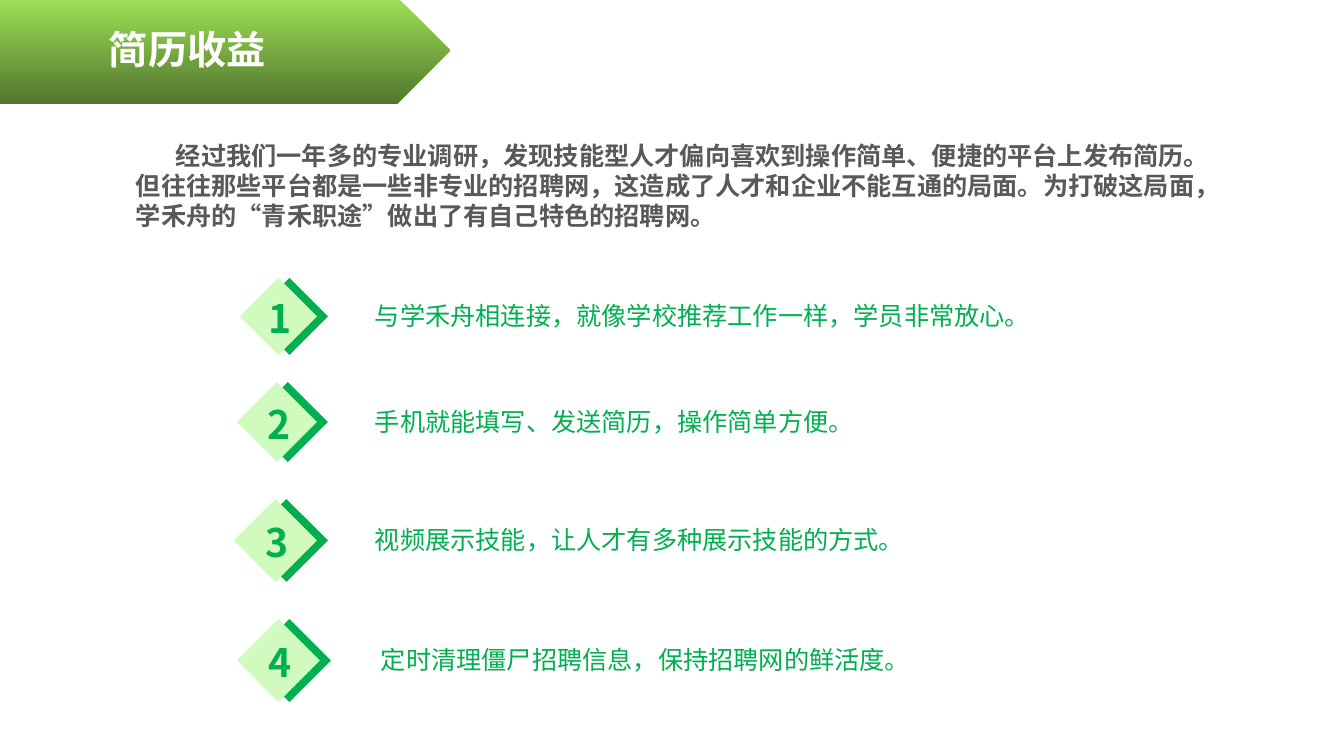
from pptx import Presentation
from pptx import util as u
from pptx.dml.color import RGBColor
from pptx.enum import shapes, text
from pptx.oxml.ns import qn

# Content
TITLE = "简历收益"
INTRO = ("经过我们一年多的专业调研，发现技能型人才偏向喜欢到操作简单、便捷的平台上发布简历。"
         "但往往那些平台都是一些非专业的招聘网，这造成了人才和企业不能互通的局面。"
         "为打破这局面，学禾舟的“青禾职途”做出了有自己特色的招聘网。")
# (benefit, text left, diamond left, diamond top, diamond size) in px
BENEFITS = [
    ("与学禾舟相连接，就像学校推荐工作一样，学员非常放心。", 365, 240, 278, 77),
    ("手机就能填写、发送简历，操作简单方便。", 365, 237, 382, 80),
    ("视频展示技能，让人才有多种展示技能的方式。", 365, 234, 499, 83),
    ("定时清理僵尸招聘信息，保持招聘网的鲜活度。", 371, 237, 619, 83),
]
COLORS = {"green": "00B050", "pale": "D1FABE", "gray": "595959", "white": "FFFFFF",
          "banner_top": "9EE256", "banner_bottom": "52762D"}
FONT = "Noto Sans CJK SC"
PX = 914400 / 100.8
SHADE_OFFSET = 11
NUMBER_OFFSET = 2


def px(n):
    return u.Emu(round(n * PX))


def rgb(name):
    return RGBColor.from_string(COLORS[name])


prs = Presentation()
prs.slide_width, prs.slide_height = px(1344), px(756)
slide = prs.slides.add_slide(prs.slide_layouts[6])


def add_block(preset, left, top, width, height, color=None):
    block = slide.shapes.add_shape(preset, px(left), px(top), px(width), px(height))
    block.shadow.inherit = False
    block.line.fill.background()
    if color:
        block.fill.solid()
        block.fill.fore_color.rgb = rgb(color)
    return block


def add_label(words, left, top, width, height, size, color, bold=False, align=None):
    box = slide.shapes.add_textbox(px(left), px(top), px(width), px(height))
    frame = box.text_frame
    frame.word_wrap = True
    frame.text = words
    paragraph = frame.paragraphs[0]
    paragraph.alignment = align
    run = paragraph.runs[0]
    run.font.size, run.font.bold, run.font.name = u.Pt(size), bold, FONT
    run.font.color.rgb = rgb(color)
    # East Asian typeface
    props = run._r.rPr
    props.find(qn("a:latin")).addnext(props.makeelement(qn("a:ea"), {"typeface": FONT}))
    return paragraph


# Title banner
banner = add_block(shapes.MSO_SHAPE.PENTAGON, -1, -3, 451, 107)
banner.fill.gradient()
banner.fill.gradient_angle = 270
for stop, color, position in zip(banner.fill.gradient_stops,
                                 ("banner_top", "banner_bottom"), (0, 1)):
    stop.color.rgb = rgb(color)
    stop.position = position
add_label(TITLE, 99, 20, 223, 60, 28, "white", bold=True)

# Introduction with a first-line indent
intro = add_label(INTRO, 126, 135, 1118, 133, 18, "gray", bold=True)
intro._p.get_or_add_pPr().set("indent", str(px(40)))

# Numbered benefits
for number, (benefit, text_left, left, top, size) in enumerate(BENEFITS, 1):
    for color, offset in (("green", SHADE_OFFSET), ("pale", 0)):
        add_block(shapes.MSO_SHAPE.DIAMOND, left + offset, top, size, size, color)
    middle = top + size // 2
    add_label(str(number), left + NUMBER_OFFSET, middle - 27, size, 60, 28, "green",
              bold=True, align=text.PP_ALIGN.CENTER)
    add_label(benefit, text_left, middle - 21, 740, 42, 18, "green")

prs.save("out.pptx")
